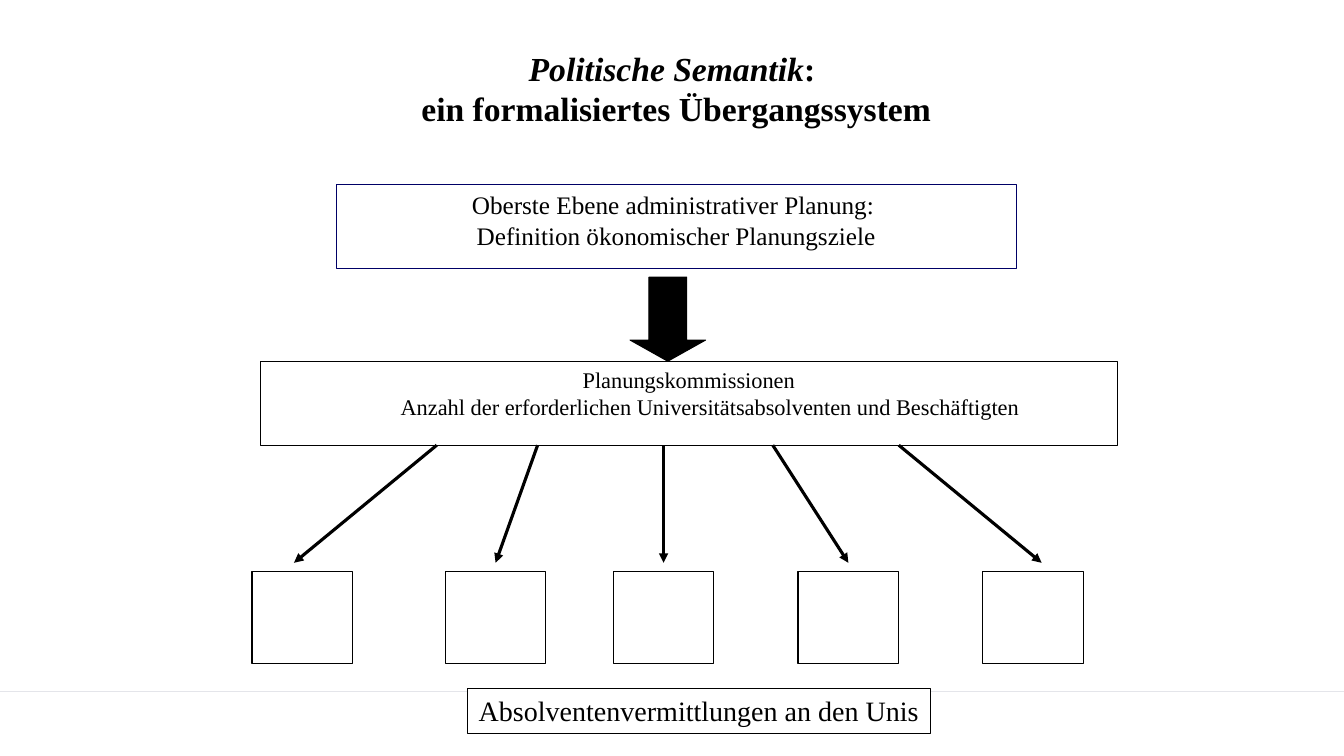
from pptx import Presentation
from pptx.dml.color import RGBColor
from pptx.enum.shapes import MSO_CONNECTOR, MSO_SHAPE
from pptx.enum.text import MSO_ANCHOR, PP_ALIGN
from pptx.oxml.ns import qn
from pptx.util import Inches, Pt
from lxml.etree import SubElement

COLS, ROWS = 160, 90
WIDTH, HEIGHT = Inches(13.33), Inches(7.5)
BLACK, NAVY, WHITE, GREY = "000000", "000066", "FFFFFF", "E4E5EA"


def paint(target, code):
    """Set a solid colour on a fill, or the colour of a font."""
    if hasattr(target, "solid"):
        target.solid()
        target = target.fore_color
    else:
        target = target.color
    target.rgb = RGBColor.from_string(code)


def place(box):
    """Turn grid columns and rows into slide lengths."""
    left, top, wide, high = box
    return (round(WIDTH * left / COLS), round(HEIGHT * top / ROWS),
            round(WIDTH * wide / COLS), round(HEIGHT * high / ROWS))


def write(shape, lines, size, bold=False, anchor=MSO_ANCHOR.TOP, wrap=True):
    """Fill a shape with one centred paragraph of lines made of (text, italic) runs."""
    frame = shape.text_frame
    frame.word_wrap = wrap
    frame.vertical_anchor = anchor
    para = frame.paragraphs[0]
    para.alignment = PP_ALIGN.CENTER
    for row, line in enumerate(lines):
        if row:
            para.add_line_break()
        for text, slant in line:
            run = para.add_run()
            run.text = text
            font = run.font
            font.name, font.size = "Times New Roman", Pt(size)
            font.bold, font.italic = bold, slant
            paint(font, BLACK)
    return para


def block(slide, box, edge=BLACK, fill=None, kind=MSO_SHAPE.RECTANGLE):
    """Draw an outlined shape in the given box."""
    shape = slide.shapes.add_shape(kind, *place(box))
    shape.shadow.inherit = False
    if fill:
        paint(shape.fill, fill)
    else:
        shape.fill.background()
    paint(shape.line.fill, edge)
    shape.line.width = Pt(0.75)
    return shape


def stroke(slide, start, end, code, width, head=False):
    """Draw a straight line between two grid points, with an optional arrowhead."""
    line = slide.shapes.add_connector(
        MSO_CONNECTOR.STRAIGHT, *place(start + end))
    paint(line.line.fill, code)
    line.line.width = Pt(width)
    if head:
        SubElement(line.line._get_or_add_ln(), qn("a:tailEnd"), type="triangle")
    SubElement(line._element.spPr, qn("a:effectLst"))


def title(slide, box):
    """Write the heading."""
    text = slide.shapes.add_textbox(*place(box))
    write(text, [[("Politische Semantik", True), (":", False)],
                 [(" ein formalisiertes Übergangssystem", False)]],
          24, True, MSO_ANCHOR.MIDDLE)


def levels(slide, box):
    """Draw the two planning levels and the block arrow between them."""
    left, top, wide, high = box
    goals = block(slide, (left + 9, top, 81, 10), NAVY)
    write(goals, [[("Oberste Ebene administrativer Planung: ", False)],
                  [("Definition ökonomischer Planungsziele", False)]], 18)
    board = block(slide, (left, top + high - 10, wide, 10))
    para = write(board, [
        [("Planungskommissionen", False)],
        [("Anzahl der erforderlichen Universitätsabsolventen und Beschäftigten",
          False)]], 16)
    props = para._p.get_or_add_pPr()
    props.set("marL", str(Inches(0.42)))
    props.set("indent", str(-Inches(0.42)))
    arrow = block(slide, (left + 44, top + 11, 9, 10), fill=BLACK,
                  kind=MSO_SHAPE.DOWN_ARROW)
    arrow.adjustments[0], arrow.adjustments[1] = 0.5, 0.28


def offices(slide, box):
    """Draw the fan of arrows, the row of squares and their label."""
    left, top, wide, high = box
    fan = [(22, 5, 0), (34, 29, 23), (49, 49, 43), (62, 71, 65), (77, 94, 87)]
    for start, end, side in fan:
        stroke(slide, (left + start, top), (left + end, top + 14), BLACK, 2.25, True)
        block(slide, (left + side, top + 15, 12, 11))
    label = block(slide, (left + 25.6, top + high - 5.3, 55.2, 5.3), fill=WHITE)
    write(label, [[("Absolventenvermittlungen an den Unis", False)]], 20, wrap=False)


def main():
    """Build and save the slide."""
    deck = Presentation()
    deck.slide_width, deck.slide_height = WIDTH, HEIGHT
    slide = deck.slides.add_slide(deck.slide_layouts[6])
    paint(slide.background.fill, WHITE)
    stroke(slide, (0, 82.3), (COLS, 82.3), GREY, 0.5)
    title(slide, (24, 3, 112, 15))
    levels(slide, (31, 22, 102, 31))
    offices(slide, (30, 53, 99, 34.3))
    deck.save("out.pptx")


if __name__ == "__main__":
    main()
